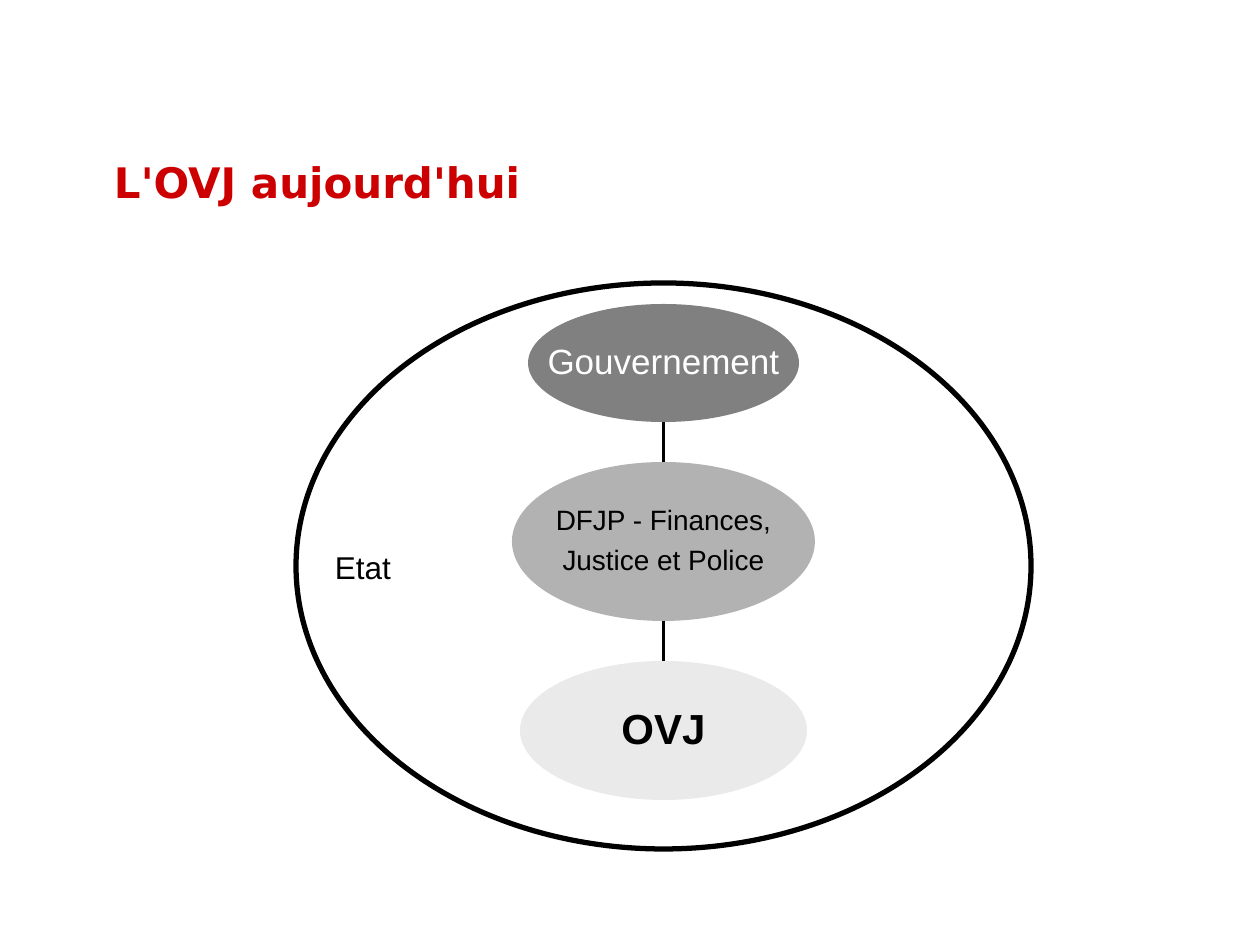
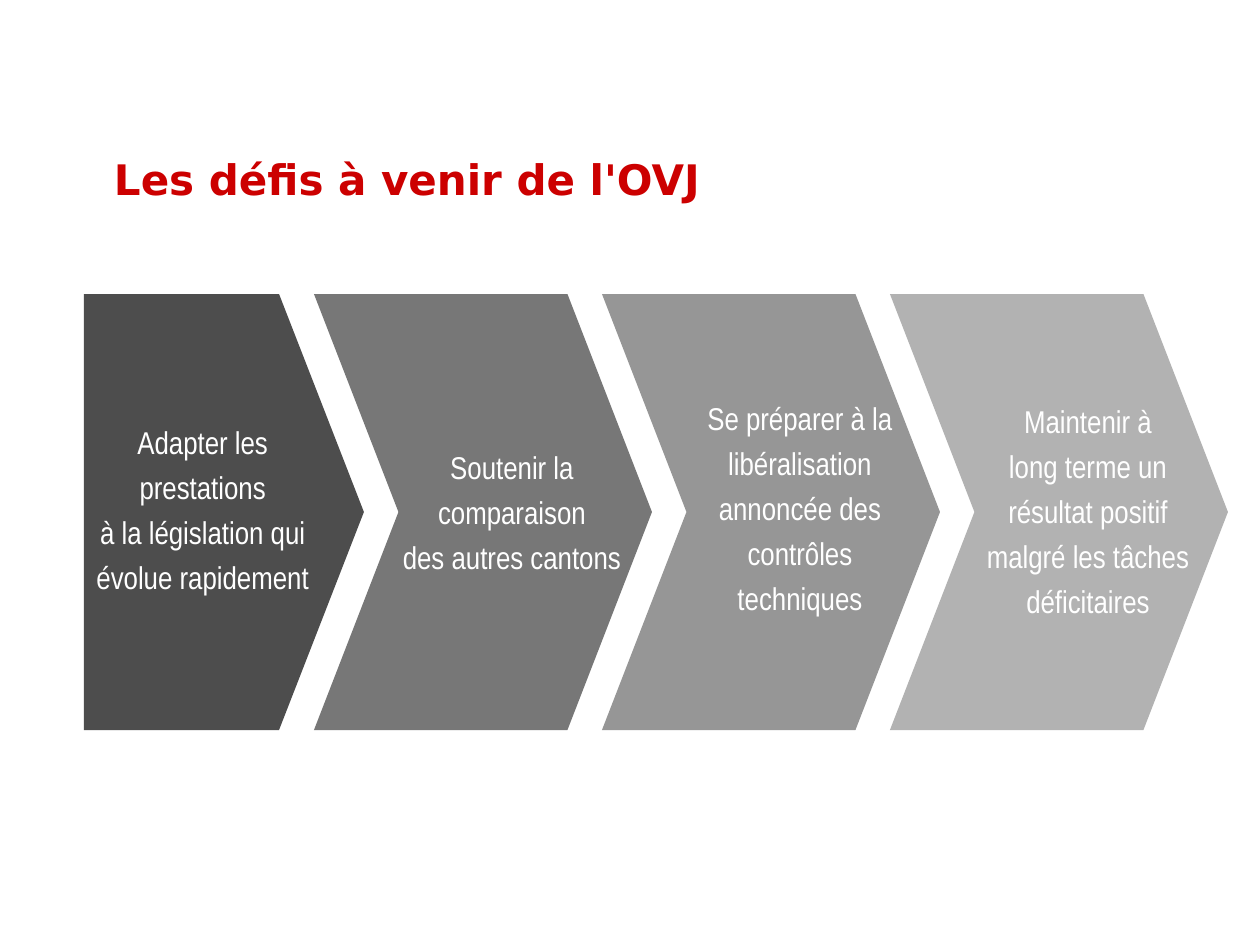
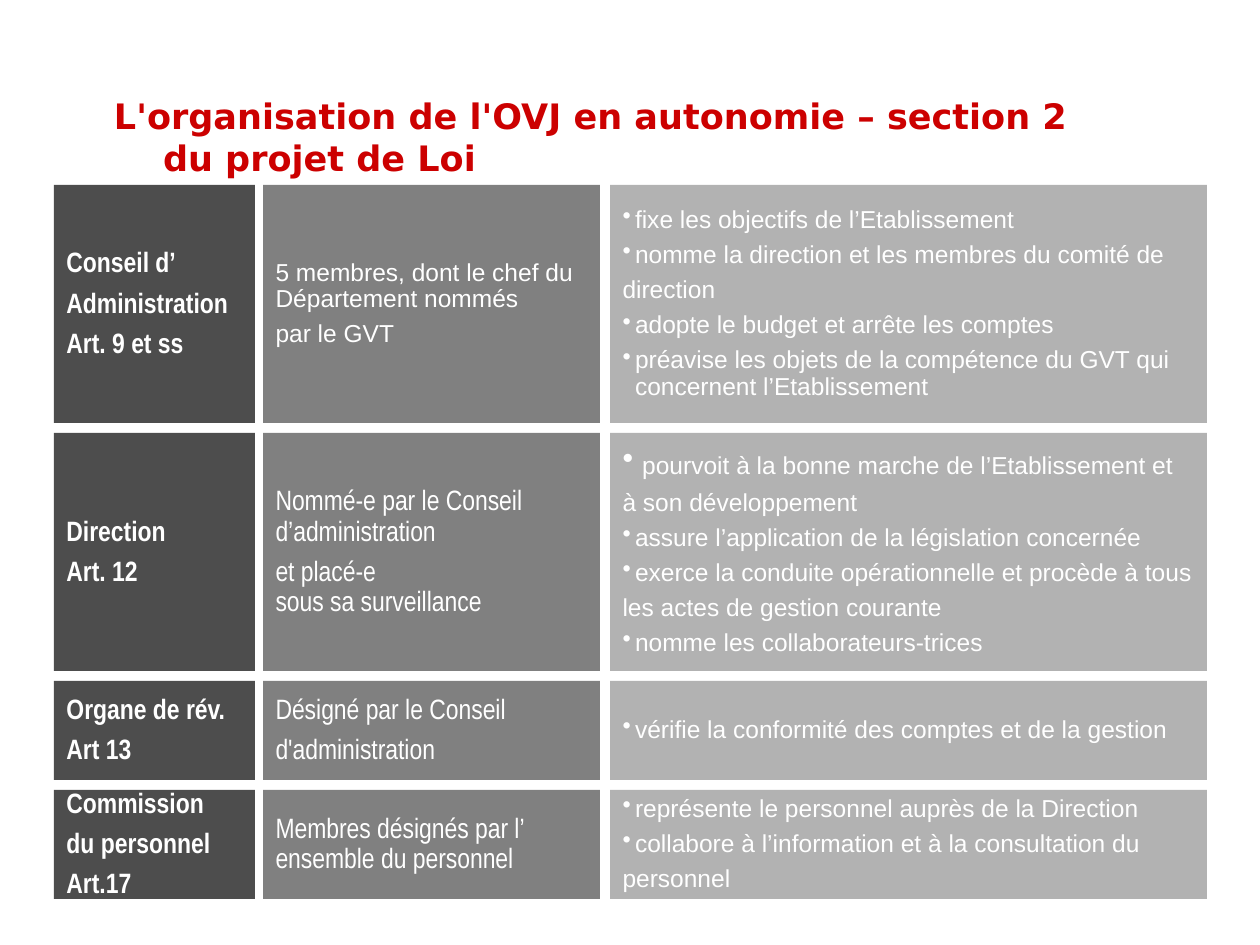
from lxml.etree import SubElement
from pptx import Presentation
from pptx.dml.color import RGBColor
from pptx.enum.shapes import MSO_CONNECTOR, MSO_SHAPE
from pptx.enum.text import MSO_ANCHOR, MSO_AUTO_SIZE, PP_ALIGN
from pptx.oxml.ns import qn
from pptx.util import Emu, Pt

PX_PER_INCH = 126
COLORS = {
    "title": "CC0000", "black": "000000", "white": "FFFFFF",
    "dark": "4D4D4D", "slate": "777777", "gray": "808080",
    "medium": "969696", "light": "B2B2B2", "pale": "EAEAEA",
}
TITLE_FONT, SANS, NARROW = "DejaVu Sans", "Arial", "Arial Narrow"


def px(n):
    return Emu(round(n * 914400 / PX_PER_INCH))


def color(name):
    return RGBColor.from_string(COLORS[name])


# Text
def add_run(p, text, font, size, ink, bold=False):
    for i, part in enumerate(text.split("\n")):
        if i:
            p.add_line_break()
        r = p.add_run()
        r.text = part
        r.font.name, r.font.size, r.font.bold = font, Pt(size), bold
        r.font.color.rgb = color(ink)


def set_frame(tf, wrap=True, anchor=MSO_ANCHOR.TOP, margins=(0, 0, 0, 0)):
    tf.word_wrap = wrap
    tf.auto_size = MSO_AUTO_SIZE.NONE
    tf.vertical_anchor = anchor
    (tf.margin_left, tf.margin_top,
     tf.margin_right, tf.margin_bottom) = [px(m) for m in margins]


def set_indent(p, left, first, bullet=False):
    pPr = p._p.get_or_add_pPr()
    pPr.set("marL", str(px(left)))
    pPr.set("indent", str(px(first)))
    if bullet:
        SubElement(pPr, qn("a:buChar")).set("char", "•")


def add_lines(tf, lines, font, size, ink, bold=False, align=PP_ALIGN.CENTER, left=0):
    """One paragraph a line; a leading bullet sign makes a list item."""
    for i, line in enumerate(lines):
        p = tf.paragraphs[0] if i == 0 else tf.add_paragraph()
        p.alignment = align
        p.line_spacing = 0.9
        if i:
            p.space_before = Pt(round(0.35 * size, 1))
        bullet = line.startswith("•")
        if bullet:
            set_indent(p, 2 * left, -left, bullet)
        elif left:
            set_indent(p, left, 0)
        text = line.removeprefix("•")
        if text.startswith(" "):  # wide gap after a larger bullet
            add_run(p, " ", NARROW, 18, ink)
        add_run(p, text.strip(), font, size, ink, bold)


# Shapes
def add_box(s, kind, box, fill):
    sp = s.shapes.add_shape(kind, *[px(n) for n in box])
    sp.shadow.inherit = False
    sp.fill.solid()
    sp.fill.fore_color.rgb = color(fill)
    sp.line.fill.background()
    return sp


def add_text_box(s, box, margins=(0, 0, 0, 0)):
    tf = s.shapes.add_textbox(*[px(n) for n in box]).text_frame
    set_frame(tf, margins=margins)
    return tf


def add_line(s, x, top, bottom):
    line = s.shapes.add_connector(MSO_CONNECTOR.STRAIGHT, px(x), px(top), px(x), px(bottom))
    line.line.color.rgb = color("black")
    line.line.width = Pt(1.25)
    SubElement(line._element.spPr, qn("a:effectLst"))


def add_titled_slide(prs, text, top, height, size=24, inset=8):
    s = prs.slides.add_slide(prs.slide_layouts[5])
    title = s.shapes.title
    title.left, title.top, title.width, title.height = px(101), px(top), px(1026), px(height)
    set_frame(title.text_frame, margins=(13, inset, 13, 0))
    p = title.text_frame.paragraphs[0]
    p.alignment = PP_ALIGN.LEFT
    set_indent(p, 49, -49)
    add_run(p, text, TITLE_FONT, size, "title", True)
    return s


# Slide 1: nested ovals
def add_state_diagram(s, box):
    left, top, width, height = box
    state = add_box(s, MSO_SHAPE.OVAL, box, "white")
    state.line.color.rgb = color("black")
    state.line.width = Pt(3)
    ovals = [
        (21, 271, 118, "gray", ["Gouvernement"], 20, "white", False),
        (179, 303, 159, "light", ["DFJP - Finances,", "Justice et Police"], 16, "black", False),
        (378, 287, 139, "pale", ["OVJ"], 24, "black", True),
    ]
    center = left + width / 2
    previous_bottom = None
    for dy, w, h, fill, lines, size, ink, bold in ovals:
        y = top + dy
        sp = add_box(s, MSO_SHAPE.OVAL, (center - w / 2, y, w, h), fill)
        set_frame(sp.text_frame, False, MSO_ANCHOR.MIDDLE)
        add_lines(sp.text_frame, lines, SANS, size, ink, bold)
        if previous_bottom:
            add_line(s, center, previous_bottom, y)
        previous_bottom = y + h
    tf = add_text_box(s, (left + 26, top + 259, 110, 50), (13, 6, 13, 6))
    add_run(tf.paragraphs[0], "Etat", SANS, 18, "black")


# Slide 2: row of arrows
def add_challenges(s, box):
    left, top, width, height = box
    pitch, first_width, chevron_width = 288, 280, 338
    start = add_box(s, MSO_SHAPE.PENTAGON, (left, top, first_width, height), "dark")
    start.adjustments[0] = 0.303
    set_frame(start.text_frame, False, MSO_ANCHOR.MIDDLE)
    add_lines(start.text_frame,
              ["Adapter les", "prestations", "à la législation qui", "évolue rapidement"],
              NARROW, 18, "white")
    chevrons = [
        ("slate", 158, 125, ["Soutenir la", "comparaison", "des autres cantons"]),
        ("medium", 109, 217, ["Se préparer à la", "libéralisation", "annoncée des",
                              "contrôles", "techniques"]),
        ("light", 112, 217, ["Maintenir à", "long terme un", "résultat positif",
                             "malgré les tâches", "déficitaires"]),
    ]
    first_left = left + width - chevron_width - pitch * (len(chevrons) - 1)
    for i, (fill, dy, h, lines) in enumerate(chevrons):
        x = first_left + i * pitch
        sp = add_box(s, MSO_SHAPE.CHEVRON, (x, top, chevron_width, height), fill)
        sp.adjustments[0] = 0.25
        tf = add_text_box(s, (x + 79, top + dy, 238, h))
        add_lines(tf, lines, NARROW, 18, "white")


# Slide 3: grid of bodies, members and duties
BODIES = [
    (238, ["Conseil d’", "Administration", "Art. 9 et ss"],
     ["5 membres, dont le chef du\nDépartement nommés", "par le GVT"],
     ["•fixe les objectifs de l’Etablissement",
      "•nomme la direction et les membres du comité de",
      "direction",
      "•adopte le budget et arrête les comptes",
      "•préavise les objets de la compétence du GVT qui\nconcernent l’Etablissement"]),
    (238, ["Direction", "Art. 12"],
     ["Nommé-e par le Conseil\nd’administration", "et placé-e\nsous sa surveillance"],
     ["• pourvoit à la bonne marche de l’Etablissement et",
      "à son développement",
      "•assure l’application de la législation concernée",
      "•exerce la conduite opérationnelle et procède à tous",
      "les actes de gestion courante",
      "•nomme les collaborateurs-trices"]),
    (99, ["Organe de rév.", "Art 13"],
     ["Désigné par le Conseil", "d'administration"],
     ["•vérifie la conformité des comptes et de la gestion"]),
    (109, ["Commission", "du personnel", "Art.17"],
     ["Membres désignés par l’\nensemble du personnel"],
     ["•représente le personnel auprès de la Direction",
      "•collabore à l’information et à la consultation du",
      "personnel"]),
]


def add_organisation(s, left, top):
    gap = 10
    columns = [(0, 201, "dark"), (209, 337, "gray"), (556, 597, "light")]
    y = top
    for row, (height, *cells) in enumerate(BODIES):
        for col, ((dx, width, fill), lines) in enumerate(zip(columns, cells)):
            sp = add_box(s, MSO_SHAPE.RECTANGLE, (left + dx, y, width, height), fill)
            set_frame(sp.text_frame, True, MSO_ANCHOR.MIDDLE)
            sans = col == 2 or (row, col) == (0, 1)
            font, size = (SANS, 14) if sans else (NARROW, 16)
            add_lines(sp.text_frame, lines, font, size, "white", col == 0, PP_ALIGN.LEFT, 12.5)
        y += height + gap


def main():
    prs = Presentation()
    prs.slide_width, prs.slide_height = px(1260), px(945)

    s = add_titled_slide(prs, "L'OVJ aujourd'hui", 106, 89, inset=50)
    add_state_diagram(s, (296, 283, 735, 566))

    s = add_titled_slide(prs, "Les défis à venir de l'OVJ", 145, 89)
    add_challenges(s, (84, 294, 1144, 436))

    s = add_titled_slide(prs, "L'organisation de l'OVJ en autonomie – section 2 du projet de Loi",
                         86, 110, size=20)
    add_organisation(s, 54, 185)

    prs.save("out.pptx")


if __name__ == "__main__":
    main()
